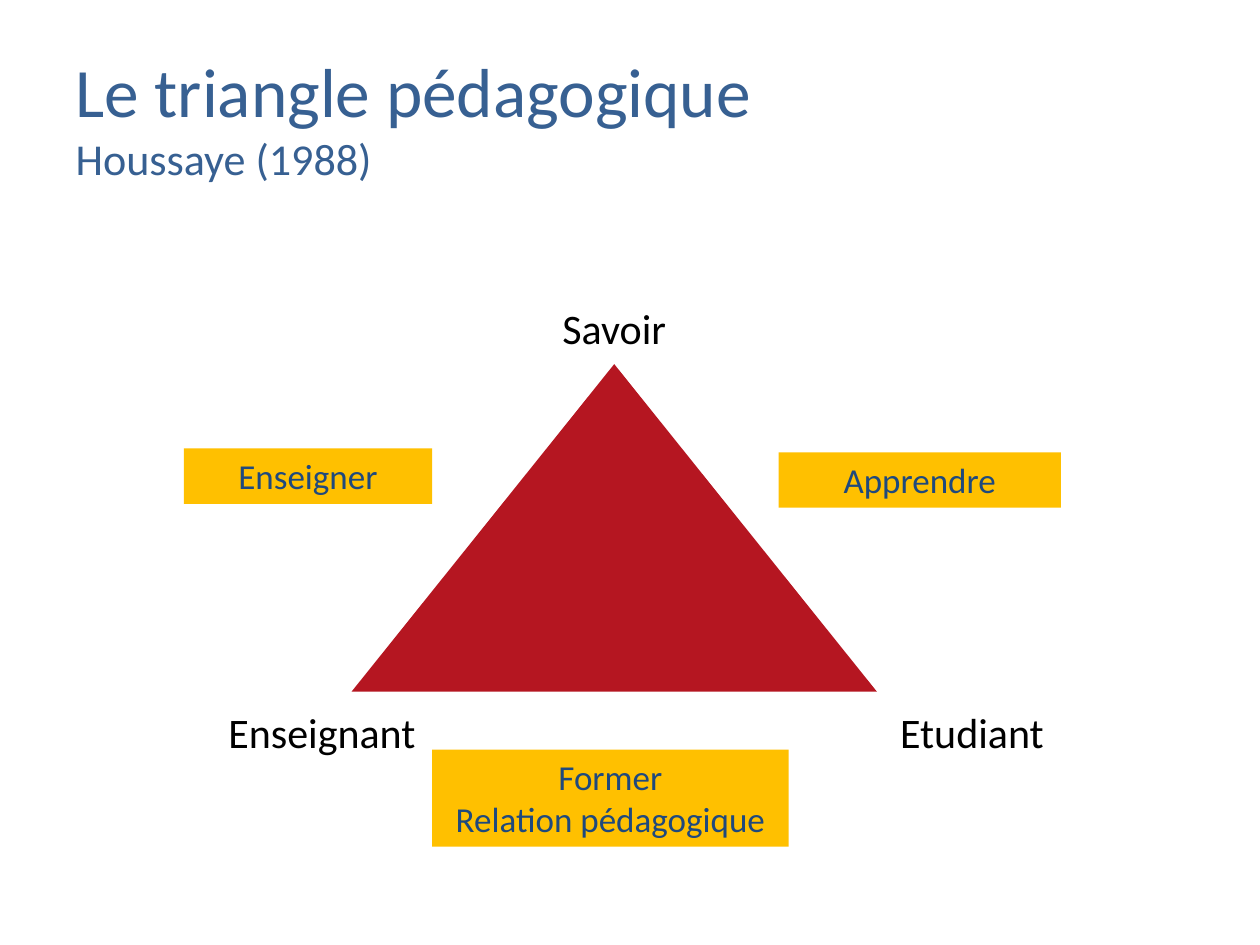
from pptx import Presentation
from pptx import util as u
from pptx.dml import color
from pptx.enum import shapes, text

COLORS = {
    "title": "376092",
    "triangle": "B51621",
    "activity": "FFC000",
    "activity_text": "1F497D",
    "corner_text": "000000",
}
CORNERS = [
    ("Savoir", (4.09, 2.35, 1.57, 0.5)),
    ("Etudiant", (6.73, 5.56, 1.97, 0.5)),
    ("Enseignant", (1.69, 5.56, 1.73, 0.5)),
]
ACTIVITIES = [
    (["Former", "Relation pédagogique"], (3.43, 5.95, 2.83, 0.77)),
    (["Enseigner"], (1.46, 3.56, 1.97, 0.44)),
    (["Apprendre"], (6.18, 3.59, 2.24, 0.44)),
]


def inches(box):
    return [u.Inches(value) for value in box]


def format_run(run, size, color_name):
    for name, value in {"name": "Calibri", "size": u.Pt(size)}.items():
        setattr(run.font, name, value)
    run.font.color.rgb = color.RGBColor.from_string(COLORS[color_name])


def write_lines(shape, lines, size, color_name):
    frame = shape.text_frame
    settings = {"word_wrap": True, "vertical_anchor": text.MSO_ANCHOR.TOP}
    for name, value in settings.items():
        setattr(frame, name, value)
    for index, line in enumerate(lines):
        paragraph = frame.add_paragraph() if index else frame.paragraphs[0]
        paragraph.alignment = text.PP_ALIGN.CENTER
        run = paragraph.add_run()
        run.text = line
        format_run(run, size, color_name)


def add_filled_shape(slide, kind, box, color_name):
    shape = slide.shapes.add_shape(kind, *inches(box))
    shape.shadow.inherit = False
    shape.fill.solid()
    shape.fill.fore_color.rgb = color.RGBColor.from_string(COLORS[color_name])
    shape.line.fill.background()
    return shape


def place_title(slide, box):
    title = slide.shapes.title
    for name, value in zip(("left", "top", "width", "height"), inches(box)):
        setattr(title, name, value)
    frame = title.text_frame
    settings = {
        "word_wrap": True,
        "auto_size": text.MSO_AUTO_SIZE.NONE,
        "vertical_anchor": text.MSO_ANCHOR.MIDDLE,
    }
    for name, value in settings.items():
        setattr(frame, name, value)
    paragraph = frame.paragraphs[0]
    paragraph.alignment = text.PP_ALIGN.LEFT
    heading = paragraph.add_run()
    heading.text = "Le triangle pédagogique"
    format_run(heading, 39.6, "title")
    paragraph.add_line_break()
    author = paragraph.add_run()
    author.text = "Houssaye (1988)"
    format_run(author, 25.2, "title")


def place_triangle(slide, box):
    add_filled_shape(slide, shapes.MSO_SHAPE.ISOSCELES_TRIANGLE, box, "triangle")


def place_corner(slide, label, box):
    corner = slide.shapes.add_textbox(*inches(box))
    write_lines(corner, [label], 24, "corner_text")


def place_activity(slide, lines, box):
    activity = add_filled_shape(slide, shapes.MSO_SHAPE.RECTANGLE, box, "activity")
    write_lines(activity, lines, 20, "activity_text")


def main():
    presentation = Presentation()
    presentation.slide_width = u.Inches(10)
    presentation.slide_height = u.Inches(7.5)
    slide = presentation.slides.add_slide(presentation.slide_layouts[5])
    place_title(slide, (0.5, 0.3, 9, 1.25))
    place_triangle(slide, (2.79, 2.89, 4.17, 2.6))
    for label, box in CORNERS:
        place_corner(slide, label, box)
    for lines, box in ACTIVITIES:
        place_activity(slide, lines, box)
    presentation.save("out.pptx")


if __name__ == "__main__":
    main()
